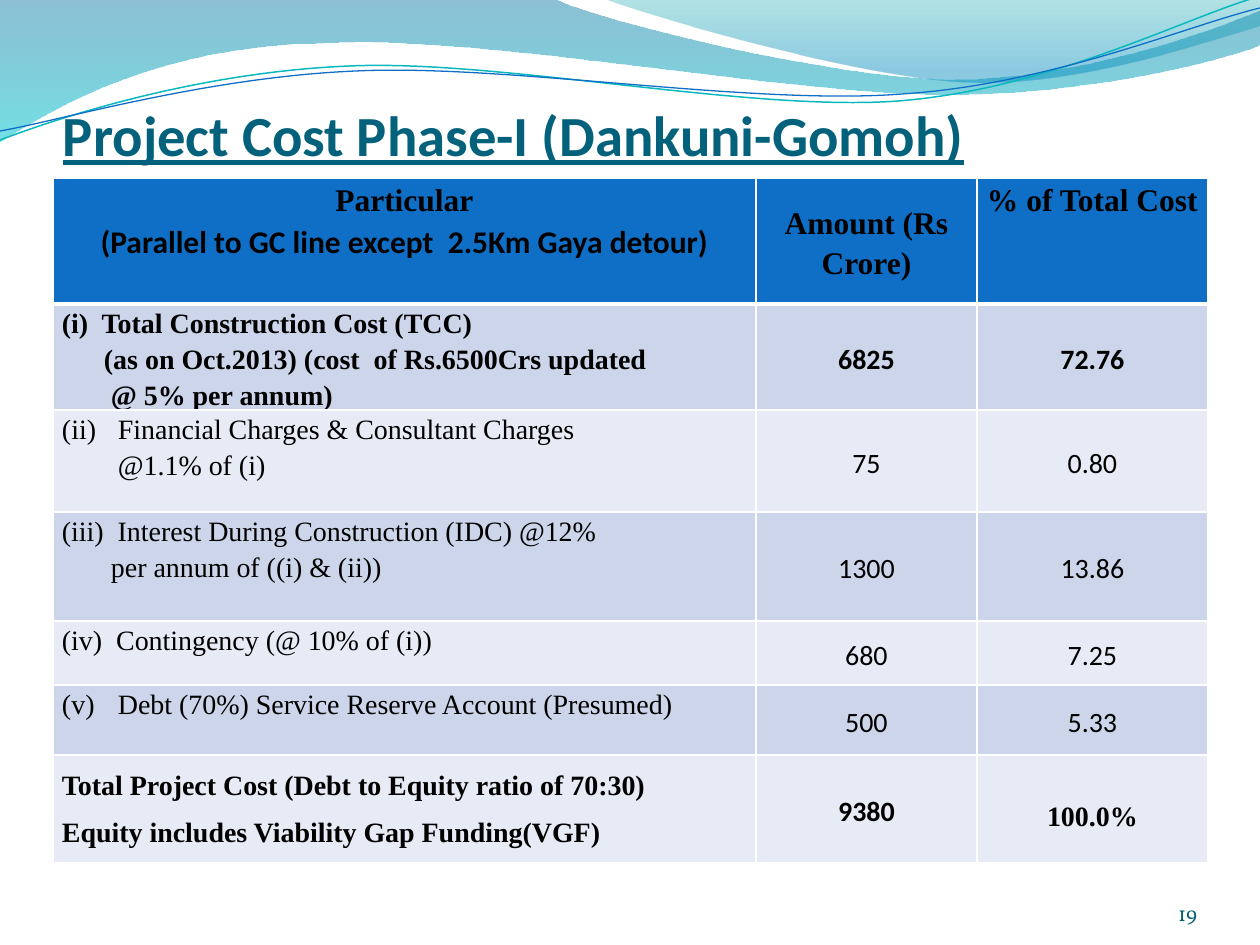
from lxml.etree import SubElement
from pptx import Presentation
from pptx.dml.color import RGBColor
from pptx.enum.text import MSO_ANCHOR, PP_ALIGN
from pptx.oxml.ns import qn
from pptx.util import Pt

PX = 914400 / 126
BLACK = RGBColor(0x00, 0x00, 0x00)
TEAL = RGBColor(0x04, 0x61, 0x7B)
PAGE = RGBColor(0x04, 0x5D, 0x75)
BLUE = RGBColor(0x0F, 0x6F, 0xC6)
AQUA = RGBColor(0x0A, 0xB8, 0xBF)
DARK = RGBColor(0xCC, 0xD5, 0xEA)
LIGHT = RGBColor(0xE7, 0xEB, 0xF5)
SERIF, SANS = "Times New Roman", "Calibri"


def px(n):
    return round(n * PX)


def style(par, font, size, color, bold=False):
    for run in par.runs:
        run.font.name = font
        run.font.size = Pt(size)
        run.font.bold = bold
        run.font.color.rgb = color


deck = Presentation()
deck.slide_width, deck.slide_height = px(1260), px(945)
slide = deck.slides.add_slide(deck.slide_layouts[6])
shapes = slide.shapes

# Waves: a step of two numbers is a line, one of six is a Bezier curve
bands = [
    ([(0, 0), (554, -1), (600, 21, 837, 79, 955, 79), (1075, 79, 1207, 33, 1260, 11),
      (1261, 45), (1239, 55, 1096, 96, 940, 94), (784, 94, 481, 35, 324, 43),
      (163, 45, 58, 105, -1, 142), (0, 0)],
     [(0, RGBColor(0x00, 0x74, 0xA1), 45), (1, RGBColor(0x00, 0xC6, 0xCF), 55)]),
    ([(604, -1), (641, 14, 859, 78, 969, 82), (1079, 86, 1211, 40, 1260, 26), (1260, 0),
      (604, -1)],
     [(0, RGBColor(0x00, 0xA1, 0xA9), 30), (0.8, RGBColor(0x00, 0x8B, 0xBF), 45)]),
]
lines = [
    ([(0, 140), (60, 117, 199, 72, 349, 66), (498, 59, 747, 112, 898, 101),
      (1050, 89, 1182, 19, 1257, -3)], (AQUA, 0.85)),
    ([(0, 131), (59, 121, 207, 77, 357, 71), (508, 64, 752, 106, 903, 94),
      (1053, 84, 1186, 26, 1260, 8)], (BLUE, 0.75)),
]
for steps, look in bands + lines:
    closed = isinstance(look, list)
    dots = [(px(s[i]), px(s[i + 1])) for s in steps for i in range(0, len(s), 2)]
    pen = shapes.build_freeform(*dots[0])
    pen.add_line_segments(dots[1:], close=closed)
    wave = pen.convert_to_shape()
    wave.shadow.inherit = False

    # Join each three points of a curve step into one Bezier segment
    legs = iter(list(wave._element.iter(qn("a:lnTo"))))
    for step in steps[1:]:
        leg = next(legs)
        if len(step) == 6:
            leg.tag = qn("a:cubicBezTo")
            for more in (next(legs), next(legs)):
                leg.append(more[0])
                more.getparent().remove(more)

    if closed:
        wave.line.fill.background()
        wave.fill.gradient()
        wave.fill.gradient_angle = 270
        for stop, (pos, color, alpha) in zip(wave.fill.gradient_stops, look):
            stop.position = pos
            stop.color.rgb = color
        tints = wave._element.spPr.iter(qn("a:srgbClr"))
        for tint, (pos, color, alpha) in zip(tints, look):
            SubElement(tint, qn("a:alpha"), val=str(alpha * 1000))
    else:
        wave.fill.background()
        wave.line.color.rgb = look[0]
        wave.line.width = Pt(look[1])

# Title and page number
labels = [
    ((63, 98, 1134, 70), "Project Cost Phase-I (Dankuni-Gomoh)", SANS, 32.4, TEAL, PP_ALIGN.LEFT),
    ((1092, 876, 105, 50), "19", "Vollkorn", 12, PAGE, PP_ALIGN.RIGHT),
]
for place, text, font, size, color, align in labels:
    head = color == TEAL
    frame = shapes.add_textbox(*map(px, place)).text_frame
    frame.word_wrap = True
    frame.vertical_anchor = MSO_ANCHOR.BOTTOM
    frame.margin_left = frame.margin_right = frame.margin_top = frame.margin_bottom = 0
    frame.text = text
    par = frame.paragraphs[0]
    par.alignment = align
    style(par, font, size, color, head)
    par.runs[0].font.underline = head

# Cost table: label lines are (text, indent, list number)
rows = [
    (126, [("Particular", 0, 0), ("(Parallel to GC line except  2.5Km Gaya detour)", 0, 0)],
     "Amount (Rs Crore)", "% of Total Cost"),
    (106, [("(i)  Total Construction Cost (TCC)", 0, 0),
           ("(as on Oct.2013) (cost  of Rs.6500Crs updated", 42, 0),
           ("@ 5% per annum)", 49, 0)], "6825", "72.76"),
    (102, [("Financial Charges & Consultant Charges", 56, 2), ("@1.1% of (i)", 56, 0)],
     "75", "0.80"),
    (109, [("(iii)  Interest During Construction (IDC) @12%", 0, 0),
           ("per annum of ((i) & (ii))", 49, 0)], "1300", "13.86"),
    (64, [("(iv)  Contingency (@ 10% of (i))", 0, 0)], "680", "7.25"),
    (70, [("Debt (70%) Service Reserve Account (Presumed)", 56, 5)], "500", "5.33"),
    (108, [("Total Project Cost (Debt to Equity ratio of 70:30)", 0, 0),
           ("Equity includes Viability Gap Funding(VGF)", 0, 0)], "9380", "100.0%"),
]
last = len(rows) - 1
wide = [703, 221, 231]
high = sum(row[0] for row in rows)
table = shapes.add_table(len(rows), 3, px(53), px(178), px(sum(wide)), px(high)).table
for col, width in zip(table.columns, wide):
    col.width = px(width)

for r, (height, names, cost, share) in enumerate(rows):
    table.rows[r].height = px(height)
    for c, items in enumerate([names, [(cost, 0, 0)], [(share, 0, 0)]]):
        cell = table.cell(r, c)
        cell.margin_left = cell.margin_right = px(9)
        cell.margin_top = 0
        # Three lines are a little taller than their row
        cell.margin_bottom = px(-10) if len(items) == 3 else 0
        top = c == 0 or (r == 0 and c == 2)
        cell.vertical_anchor = MSO_ANCHOR.TOP if top else MSO_ANCHOR.MIDDLE

        # White borders, thicker under the header
        for side in "LRTB":
            thick = (r, side) in [(0, "B"), (1, "T")]
            edge = SubElement(cell._tc.get_or_add_tcPr(), qn("a:ln" + side),
                              w=str(Pt(3 if thick else 1)))
            SubElement(SubElement(edge, qn("a:solidFill")), qn("a:srgbClr"), val="FFFFFF")
        cell.fill.solid()
        cell.fill.fore_color.rgb = BLUE if r == 0 else DARK if r % 2 else LIGHT

        cell.text_frame.text = "\n".join(item[0] for item in items)
        for n, (par, (text, left, num)) in enumerate(zip(cell.text_frame.paragraphs, items)):
            par.line_spacing = 1.5 if r == last and c != 1 else 1.15
            if r == 0 or c:
                par.alignment = PP_ALIGN.CENTER
            elif r == last:
                par.alignment = PP_ALIGN.JUSTIFY
            if left:
                prop = par._p.get_or_add_pPr()
                prop.set("marL", str(px(left)))
                if num:
                    prop.set("indent", str(-px(left)))
                    SubElement(prop, qn("a:buFont"), typeface=SERIF)
                    SubElement(prop, qn("a:buAutoNum"), type="romanLcParenBoth", startAt=str(num))
            sans = n == 1 if r == 0 else c == 1 or (c == 2 and r < last)
            style(par, SANS if sans else SERIF, 16 if r else 18, BLACK, r in (0, 1, last))

deck.save("out.pptx")
